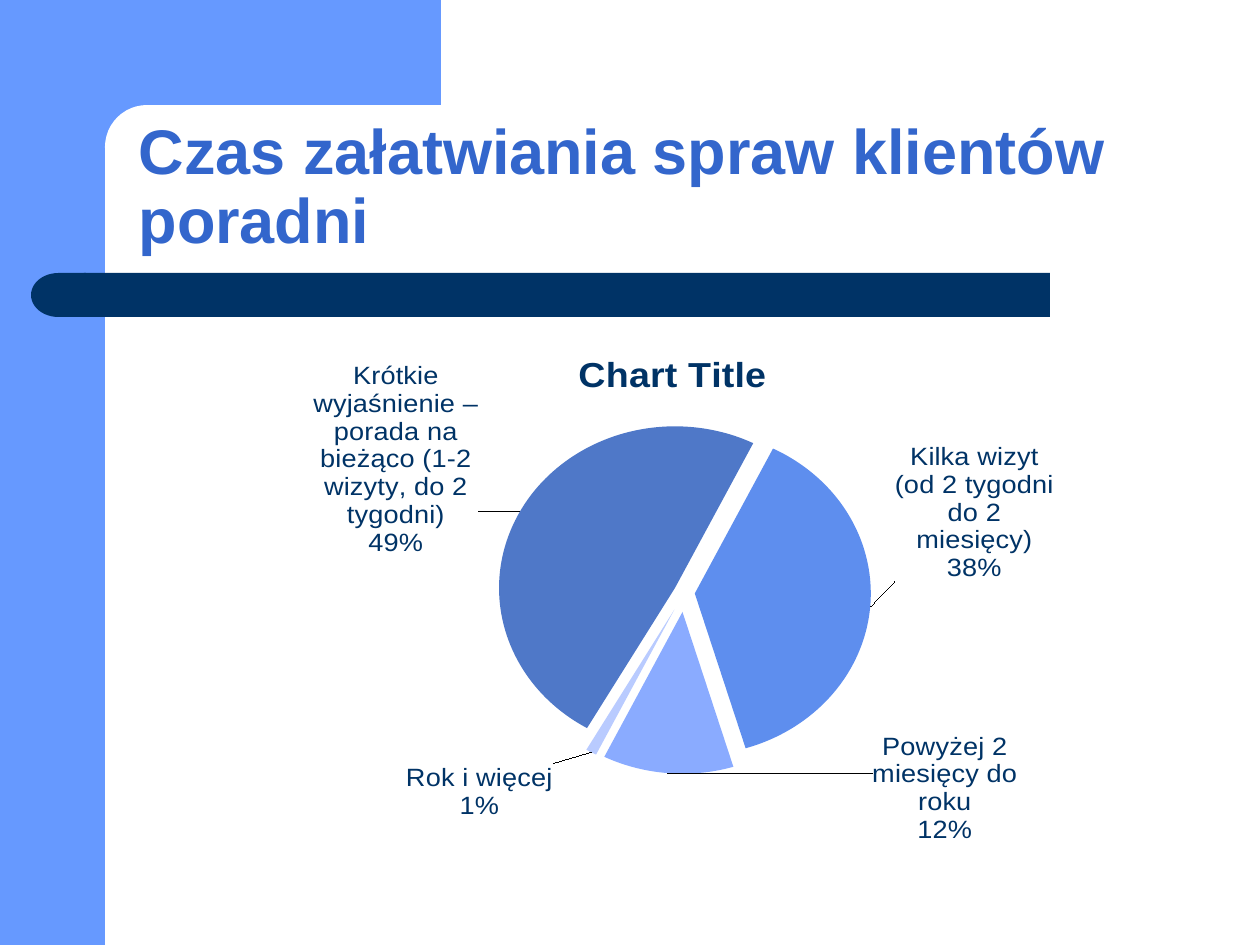
from pptx import Presentation
from pptx.chart.data import CategoryChartData
from pptx.dml.color import RGBColor
from pptx.enum.chart import XL_CHART_TYPE
from pptx.enum.shapes import MSO_SHAPE
from pptx.enum.text import MSO_ANCHOR, PP_ALIGN
from pptx.oxml import parse_xml
from pptx.oxml.ns import nsdecls
from pptx.util import Pt

PX = 914400 / 126
HUES = {"sky": "6699FF", "navy": "003366", "white": "FFFFFF", "title": "3366CC"}


def box(*nums):
    return [round(n * PX) for n in nums]


def block(kind, hue, *place):
    part = slide.shapes.add_shape(kind, *box(*place))
    part.shadow.inherit = False
    part.fill.solid()
    part.fill.fore_color.rgb = RGBColor.from_string(HUES[hue])
    part.line.fill.background()
    return part


deck = Presentation()
deck.slide_width, deck.slide_height = box(1260, 945)
slide = deck.slides.add_slide(deck.slide_layouts[5])

# Frame and bar
block(MSO_SHAPE.RECTANGLE, "sky", 0, 0, 105, 945)
block(MSO_SHAPE.RECTANGLE, "sky", 95, 0, 346, 147)
panel = block(MSO_SHAPE.ROUNDED_RECTANGLE, "white", 105, 105, 703, 84)
panel.adjustments[0] = 0.5
block(MSO_SHAPE.RECTANGLE, "navy", 84, 273, 966, 44)
cap = block(MSO_SHAPE.FLOWCHART_DELAY, "navy", 31, 273, 55, 44)
cap.element.spPr.xfrm.set("flipH", "1")

# Title, in front of the frame
title = slide.shapes.title
slide.shapes.element.append(title.element)
title.left, title.top, title.width, title.height = box(126, 105, 1103, 158)
frame = title.text_frame
frame.text = "Czas załatwiania spraw klientów poradni"
frame.word_wrap = True
frame.vertical_anchor = MSO_ANCHOR.BOTTOM
para = frame.paragraphs[0]
para.alignment = PP_ALIGN.LEFT
para.line_spacing = 0.9
font = para.runs[0].font
font.name, font.size, font.bold = "Arial", Pt(36), True
font.color.rgb = RGBColor.from_string(HUES["title"])

# Pie: name, value, colour, explosion, label shift
slices = [
    ("Krótkie wyjaśnienie – porada na bieżąco (1-2 wizyty, do 2 tygodni)",
     49, "4F78C8", 6, (-0.04, 0.09)),
    ("Kilka wizyt (od 2 tygodni do 2 miesięcy)", 38, "5E8EEE", 6, (0.02, -0.18)),
    ("Powyżej 2 miesięcy do roku", 12, "8AABFF", 12, (0.32, -0.09)),
    ("Rok i więcej", 1, "B9CBFF", 12, (-0.04, 0.01)),
]
data = CategoryChartData(number_format="General")
data.categories = [item[0] for item in slices]
data.add_series("Series 1", [item[1] for item in slices])
chart = slide.shapes.add_chart(
    XL_CHART_TYPE.PIE, *box(233, 314, 868, 577), data).chart
chart.has_legend = False
chart.font.name, chart.font.size = "Arial", Pt(15.5)
chart.font.color.rgb = RGBColor.from_string(HUES["navy"])
chart.has_title = True
head = chart.chart_title
head.text_frame.text = "Chart Title"
font = head.text_frame.paragraphs[0].runs[0].font
font.name, font.size, font.bold = "Arial", Pt(21.5), True
font.color.rgb = RGBColor.from_string(HUES["navy"])
for old in head.element.xpath("c:layout"):
    head.element.remove(old)
head.element.xpath("c:tx")[0].addnext(parse_xml(
    f'<c:layout {nsdecls("c")}><c:manualLayout><c:xMode val="edge"/>'
    '<c:yMode val="edge"/><c:x val="0.39"/><c:y val="0.03"/>'
    '</c:manualLayout></c:layout>'))

# Slices and their labels
plot = chart.plots[0]
plot.vary_by_categories = True
flags = ('<c:dLblPos val="outEnd"/><c:showLegendKey val="0"/><c:showVal val="0"/>'
         '<c:showCatName val="1"/><c:showSerName val="0"/><c:showPercent val="1"/>'
         '<c:showBubbleSize val="0"/><c:separator>\n</c:separator>')
form = '<c:numFmt formatCode="0%" sourceLinked="0"/>'
labels = ""
for i, (name, value, hue, gap, (x, y)) in enumerate(slices):
    fill = plot.series[0].points[i].format.fill
    fill.solid()
    fill.fore_color.rgb = RGBColor.from_string(hue)
    look = chart.element.xpath(f".//c:dPt[c:idx/@val='{i}']/c:spPr")[0]
    look.addprevious(parse_xml(f'<c:explosion {nsdecls("c")} val="{gap}"/>'))
    labels += (f'<c:dLbl><c:idx val="{i}"/><c:layout><c:manualLayout>'
               f'<c:x val="{x}"/><c:y val="{y}"/></c:manualLayout></c:layout>'
               f'{form}{flags}</c:dLbl>')
cats = chart.element.xpath(".//c:ser/c:cat")[0]
cats.addprevious(parse_xml(
    f'<c:dLbls {nsdecls("c")}>{labels}{form}{flags}'
    '<c:showLeaderLines val="1"/></c:dLbls>'))

# Turn and place the pie
pie = chart.element.xpath(".//c:pieChart")[0]
for old in pie.xpath("c:firstSliceAng"):
    pie.remove(old)
pie.append(parse_xml(f'<c:firstSliceAng {nsdecls("c")} val="210"/>'))
area = chart.element.xpath(".//c:plotArea")[0]
for old in area.xpath("c:layout"):
    area.remove(old)
area.insert(0, parse_xml(
    f'<c:layout {nsdecls("c")}><c:manualLayout><c:layoutTarget val="inner"/>'
    '<c:xMode val="edge"/><c:yMode val="edge"/><c:x val="0.31"/><c:y val="0.19"/>'
    '<c:w val="0.42"/><c:h val="0.61"/></c:manualLayout></c:layout>'))

deck.save("out.pptx")
